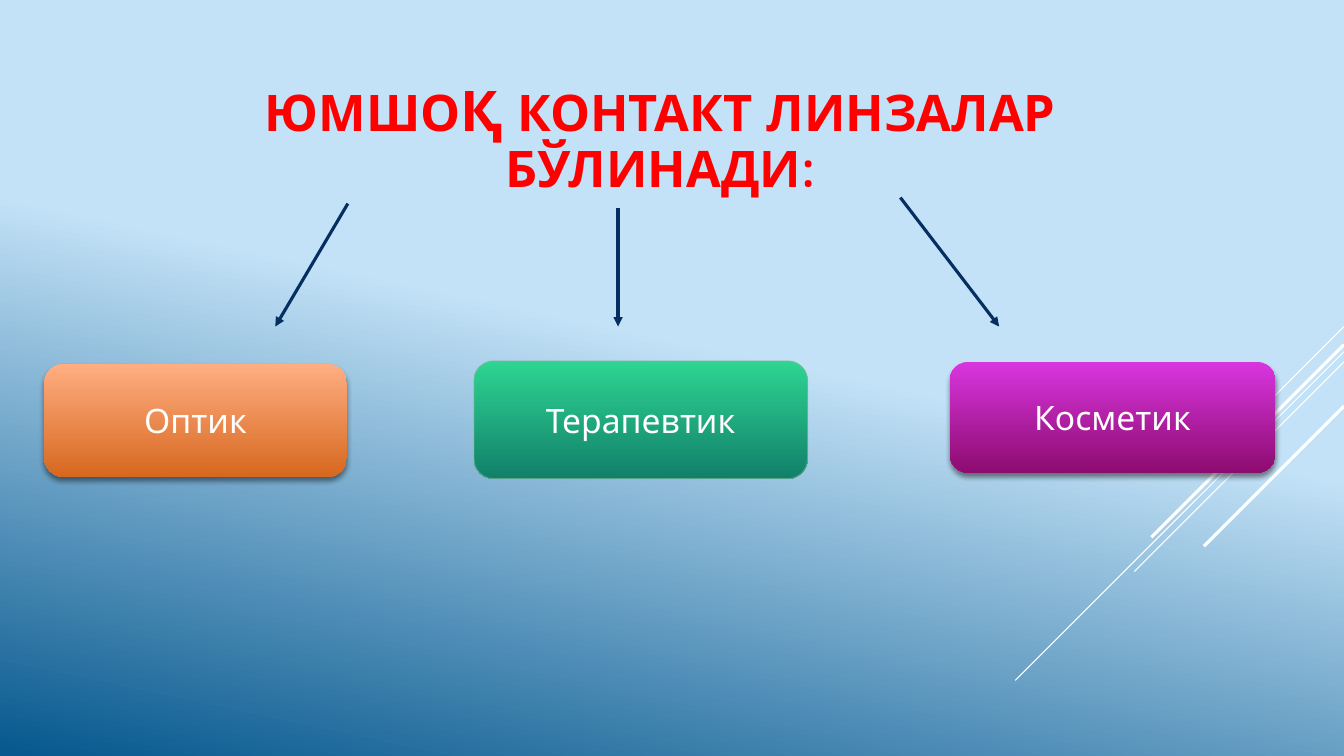
import pptx
import pptx.util
import pptx.dml.color
import pptx.enum.shapes
import pptx.enum.text
import pptx.oxml
import pptx.oxml.ns
from lxml import etree

Inches = pptx.util.Inches
Pt = pptx.util.Pt
RGBColor = pptx.dml.color.RGBColor
qn = pptx.oxml.ns.qn

FONT = "Quicksand"
WHITE = RGBColor(0xFF, 0xFF, 0xFF)
RED = RGBColor(0xFF, 0x00, 0x00)
NAVY = RGBColor(0x05, 0x2F, 0x61)
SKY = RGBColor(0xC3, 0xE2, 0xF7)
OCEAN = RGBColor(0x06, 0x58, 0x8E)
SAGE = RGBColor(0x8A, 0xB7, 0xA1)
ORANGE = (RGBColor(0xFF, 0xAE, 0x82), RGBColor(0xD7, 0x68, 0x1F))
GREEN = (RGBColor(0x2E, 0xD5, 0x92), RGBColor(0x11, 0x80, 0x6A))
PURPLE = (RGBColor(0xD8, 0x35, 0xDF), RGBColor(0x8D, 0x0C, 0x6F))


def fill_gradient(fill, colors, angle, start=0):
    """Fill with two colours, the angle being clockwise in degrees."""
    fill.gradient()
    fill.gradient_angle = 360 - angle
    for stop, color, position in zip(fill.gradient_stops, colors, (start, 1)):
        stop.color.rgb = color
        stop.position = position


def add_line(s, start, end, color, width, arrow=False):
    """Draw a straight line between two points given in inches."""
    line = s.shapes.add_connector(
        pptx.enum.shapes.MSO_CONNECTOR.STRAIGHT,
        *(Inches(v) for v in (*start, *end)))
    line.line.color.rgb = color
    line.line.width = Pt(width)
    if arrow:
        etree.SubElement(line.line._get_or_add_ln(), qn("a:tailEnd"), type="triangle")
    etree.SubElement(line._element.spPr, qn("a:effectLst"))


def add_streaks(s, right):
    """Draw the diagonal streaks that run down from the right edge."""
    for top, run, width in ((3.24, 1, 0.75), (3.49, 3.26, 0.75), (3.59, 2.08, 0.75),
                            (3.42, 1.91, 2.25), (4.03, 1.39, 2.25)):
        add_line(s, (right, top), (right - run, top + run), WHITE, width)


def add_title(s, left, top, width, height):
    """Place the heading in the title placeholder."""
    title = s.shapes.title
    title.left, title.top = Inches(left), Inches(top)
    title.width, title.height = Inches(width), Inches(height)
    tf = title.text_frame
    tf.word_wrap = True
    tf.auto_size = pptx.enum.text.MSO_AUTO_SIZE.NONE
    tf.vertical_anchor = pptx.enum.text.MSO_ANCHOR.BOTTOM
    p = tf.paragraphs[0]
    p.alignment = pptx.enum.text.PP_ALIGN.CENTER
    p.line_spacing = 0.9
    p.font.name = FONT
    p.font.bold = True
    p.font.color.rgb = RED
    for text, size in (("ЮМШО", 36), ("Қ", 40), (" КОНТАКТ ЛИНЗАЛАР БЎЛИНАДИ:", 36)):
        r = p.add_run()
        r.text = text
        r.font.size = Pt(size)


def add_shadow(sp):
    """Give a shape a soft shadow straight below it."""
    shadow = etree.SubElement(
        sp._element.spPr.find(qn("a:effectLst")), qn("a:outerShdw"),
        blurRad=str(Pt(4)), dist=str(Pt(3)), dir="5400000", rotWithShape="0")
    color = etree.SubElement(shadow, qn("a:srgbClr"), val="000000")
    etree.SubElement(color, qn("a:alpha"), val="46000")


def add_type_box(s, text, colors, left, top, width, height, outlined=False):
    """Add a lens type as a rounded box, either outlined or shadowed."""
    sp = s.shapes.add_shape(
        pptx.enum.shapes.MSO_SHAPE.ROUNDED_RECTANGLE,
        *(Inches(v) for v in (left, top, width, height)))
    sp.shadow.inherit = False
    fill_gradient(sp.fill, colors, 90)
    if outlined:
        sp.line.color.rgb = SAGE
        sp.line.width = Pt(0.75)
        color = sp.line._get_or_add_ln().find(".//" + qn("a:srgbClr"))
        etree.SubElement(color, qn("a:alpha"), val="60000")
    else:
        sp.line.fill.background()
        add_shadow(sp)
    tf = sp.text_frame
    tf.word_wrap = True
    tf.vertical_anchor = pptx.enum.text.MSO_ANCHOR.MIDDLE
    p = tf.paragraphs[0]
    p.text = text
    p.alignment = pptx.enum.text.PP_ALIGN.CENTER
    p.font.name = FONT
    p.font.size = Pt(24)
    p.font.color.rgb = WHITE


def add_lens_slide(prs):
    """Build the slide that divides soft contact lenses into types."""
    s = prs.slides.add_slide(prs.slide_layouts[5])
    fill_gradient(s.background.fill, (SKY, OCEAN), 102, 0.46)
    add_streaks(s, 13.33)
    add_title(s, 1.47, 0.52, 10.16, 1.5)
    for start, end_x in (((3.45, 2.02), 2.73), ((6.13, 2.06), 6.13), ((8.93, 1.96), 9.91)):
        add_line(s, start, (end_x, 3.24), NAVY, 2.25, arrow=True)
    add_type_box(s, "Оптик", ORANGE, 0.44, 3.61, 3, 1.12)
    add_type_box(s, "Терапевтик", GREEN, 4.7, 3.58, 3.31, 1.17, outlined=True)
    add_type_box(s, "Косметик", PURPLE, 9.42, 3.59, 3.23, 1.1)


def main():
    """Create and save the presentation."""
    prs = pptx.Presentation()
    prs.slide_width, prs.slide_height = Inches(13.33), Inches(7.5)
    add_lens_slide(prs)
    prs.save("out.pptx")


if __name__ == "__main__":
    main()
